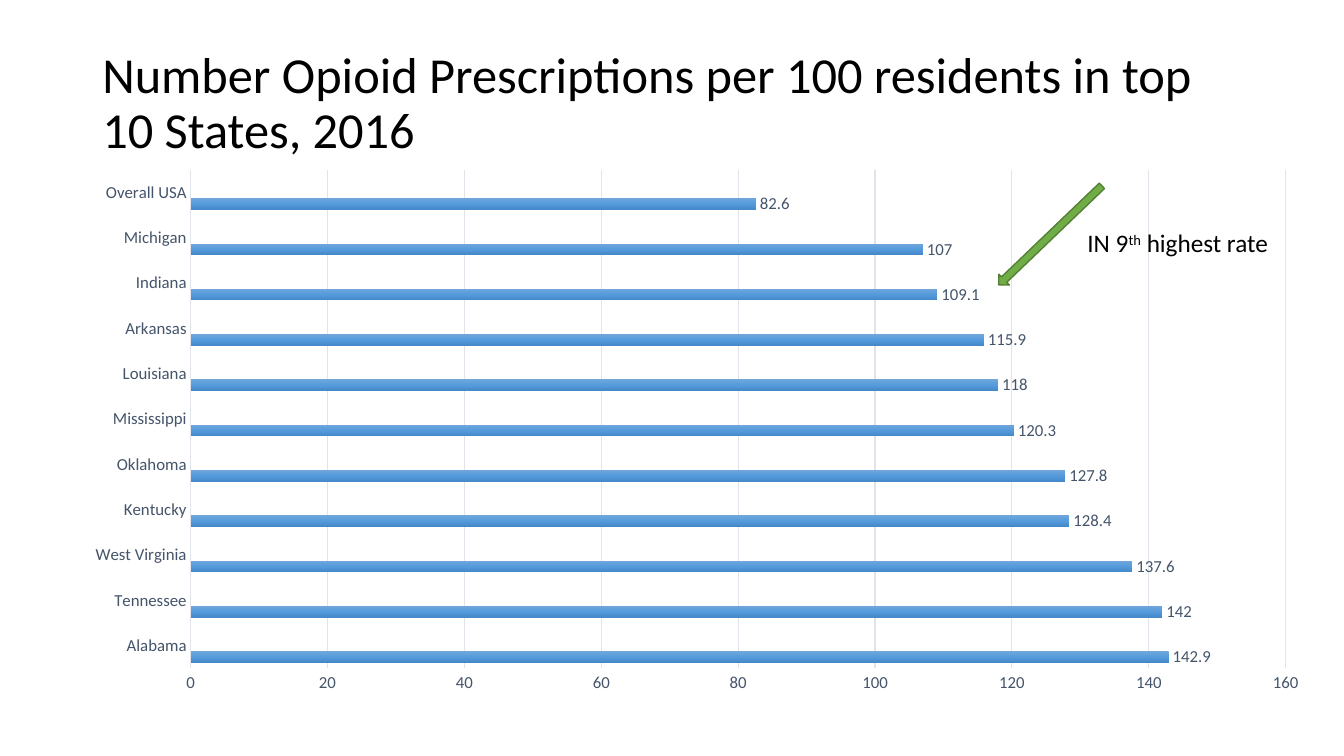
from lxml import etree
from pptx import Presentation
from pptx.chart.data import CategoryChartData
from pptx.dml.color import RGBColor
from pptx.enum.chart import XL_CHART_TYPE, XL_LABEL_POSITION, XL_TICK_MARK
from pptx.enum.shapes import MSO_SHAPE
from pptx.enum.text import MSO_ANCHOR, MSO_AUTO_SIZE
from pptx.oxml import parse_xml
from pptx.oxml.ns import nsdecls, qn
from pptx.util import Pt

BAR_CHART = XL_CHART_TYPE.BAR_CLUSTERED
OUTSIDE_END = XL_LABEL_POSITION.OUTSIDE_END
NO_TICK = XL_TICK_MARK.NONE
RIGHT_ARROW = MSO_SHAPE.RIGHT_ARROW
MIDDLE, TOP = MSO_ANCHOR.MIDDLE, MSO_ANCHOR.TOP
NO_FIT, GROW = MSO_AUTO_SIZE.NONE, MSO_AUTO_SIZE.SHAPE_TO_FIT_TEXT

BLACK = RGBColor(0x00, 0x00, 0x00)
SLATE = RGBColor(0x44, 0x54, 0x6A)
GRID = RGBColor(0xE0, 0xE5, 0xEB)
GREEN = RGBColor(0x70, 0xAD, 0x47)
DARK_GREEN = RGBColor(0x53, 0x80, 0x35)
BLUES = [RGBColor(0x71, 0xA6, 0xDB), RGBColor(0x55, 0x9B, 0xDB), RGBColor(0x44, 0x8A, 0xCA)]
ORANGES = [RGBColor(0xF1, 0x8C, 0x57), RGBColor(0xF6, 0x7B, 0x28), RGBColor(0xE5, 0x6C, 0x19)]
GREYS = [RGBColor(0xAF, 0xAF, 0xAF), RGBColor(0xA5, 0xA5, 0xA5), RGBColor(0x93, 0x93, 0x93)]
FONT = "Calibri"

RATES = {
    "Alabama": 142.9, "Tennessee": 142, "West Virginia": 137.6, "Kentucky": 128.4,
    "Oklahoma": 127.8, "Mississippi": 120.3, "Louisiana": 118, "Arkansas": 115.9,
    "Indiana": 109.1, "Michigan": 107, "Overall USA": 82.6,
}
PLOT_AREA = {"x": 0.088, "y": 0, "w": 0.884, "h": 0.9}


def apply_format(target, values):
    for name, value in values.items():
        setattr(target, name, value)


def style_font(font, size, color):
    apply_format(font, {"name": FONT, "size": Pt(size)})
    font.color.rgb = color


def add_text(page, box, spans, size, frame_format):
    frame = page.shapes.add_textbox(*map(Pt, box)).text_frame
    apply_format(frame, frame_format)
    para = frame.paragraphs[0]
    for text, baseline in spans:
        span = para.add_run()
        span.text = text
        style_font(span.font, size, BLACK)
        if baseline:
            span.font._element.set("baseline", str(baseline))
    return para


def add_title(page, box):
    title = "Number Opioid Prescriptions per 100 residents in top 10 States, 2016"
    para = add_text(page, box, [(title, 0)], 36,
                    {"word_wrap": True, "vertical_anchor": MIDDLE, "auto_size": NO_FIT})
    para.line_spacing = 0.9


def fill_gradient(series, colors):
    stops = "".join(
        f'<a:gs pos="{index * 50000}"><a:srgbClr val="{color}"/></a:gs>'
        for index, color in enumerate(colors))
    series._element.get_or_add_spPr().append(parse_xml(
        f'<a:gradFill {nsdecls("a")} rotWithShape="1"><a:gsLst>{stops}</a:gsLst>'
        '<a:lin ang="5400000" scaled="0"/></a:gradFill>'))


def place_plot(chart):
    area = chart._chartSpace.chart.plotArea
    for old in area.findall(qn("c:layout")):
        area.remove(old)
    layout = etree.Element(qn("c:layout"))
    manual = etree.SubElement(layout, qn("c:manualLayout"))
    settings = {"layoutTarget": "inner", "xMode": "edge", "yMode": "edge", **PLOT_AREA}
    for name, value in settings.items():
        etree.SubElement(manual, qn(f"c:{name}")).set("val", str(value))
    area.insert(0, layout)


def add_rate_chart(page, box):
    data = CategoryChartData()
    data.categories = list(RATES)
    data.add_series("Series 1", list(RATES.values()))
    for name in ("Series 2", "Series 3"):
        data.add_series(name, [None] * len(RATES))
    chart = page.shapes.add_chart(BAR_CHART, *map(Pt, box), data).chart
    apply_format(chart, {"has_legend": False, "has_title": False})
    style_font(chart.font, 10, BLACK)
    place_plot(chart)

    plot = chart.plots[0]
    apply_format(plot, {"gap_width": 100, "overlap": 0, "vary_by_categories": False})
    for series, colors in zip(plot.series, (BLUES, ORANGES, GREYS)):
        series.invert_if_negative = False
        fill_gradient(series, colors)
        labels = series.data_labels
        apply_format(labels, {"show_value": True, "position": OUTSIDE_END})
        style_font(labels.font, 12, SLATE)

    states, scale = chart.category_axis, chart.value_axis
    for axis in (states, scale):
        apply_format(axis, {"major_tick_mark": NO_TICK, "minor_tick_mark": NO_TICK})
        style_font(axis.tick_labels.font, 12, SLATE)
    apply_format(scale, {"minimum_scale": 0, "maximum_scale": 160, "major_unit": 20,
                         "has_major_gridlines": True})
    scale.format.line.fill.background()
    for line in (states.format.line, scale.major_gridlines.format.line):
        line.color.rgb = GRID
        line.width = Pt(0.75)


def add_callout(page, box):
    left, top, width, height = box
    arrow = page.shapes.add_shape(RIGHT_ARROW, Pt(left), Pt(top + 3.6), Pt(102.2), Pt(10.8))
    arrow.rotation = 136.2
    arrow.shadow.inherit = False
    arrow.fill.solid()
    arrow.fill.fore_color.rgb = GREEN
    arrow.line.color.rgb = DARK_GREEN
    arrow.line.width = Pt(1)
    label_left = left + 70.6
    add_text(page, (label_left, top, left + width - label_left, height),
             [("IN 9", 0), ("th", 30000), (" highest rate", 0)], 18,
             {"word_wrap": False, "vertical_anchor": TOP, "auto_size": GROW})


def main():
    deck = Presentation()
    apply_format(deck, {"slide_width": Pt(960), "slide_height": Pt(540)})
    page = deck.slides.add_slide(deck.slide_layouts[6])
    add_title(page, (66, 28.8, 828, 92.2))
    add_rate_chart(page, (58.3, 121, 884.9, 396))
    add_callout(page, (699.1, 159.1, 216.8, 28.8))
    deck.save("out.pptx")


if __name__ == "__main__":
    main()
